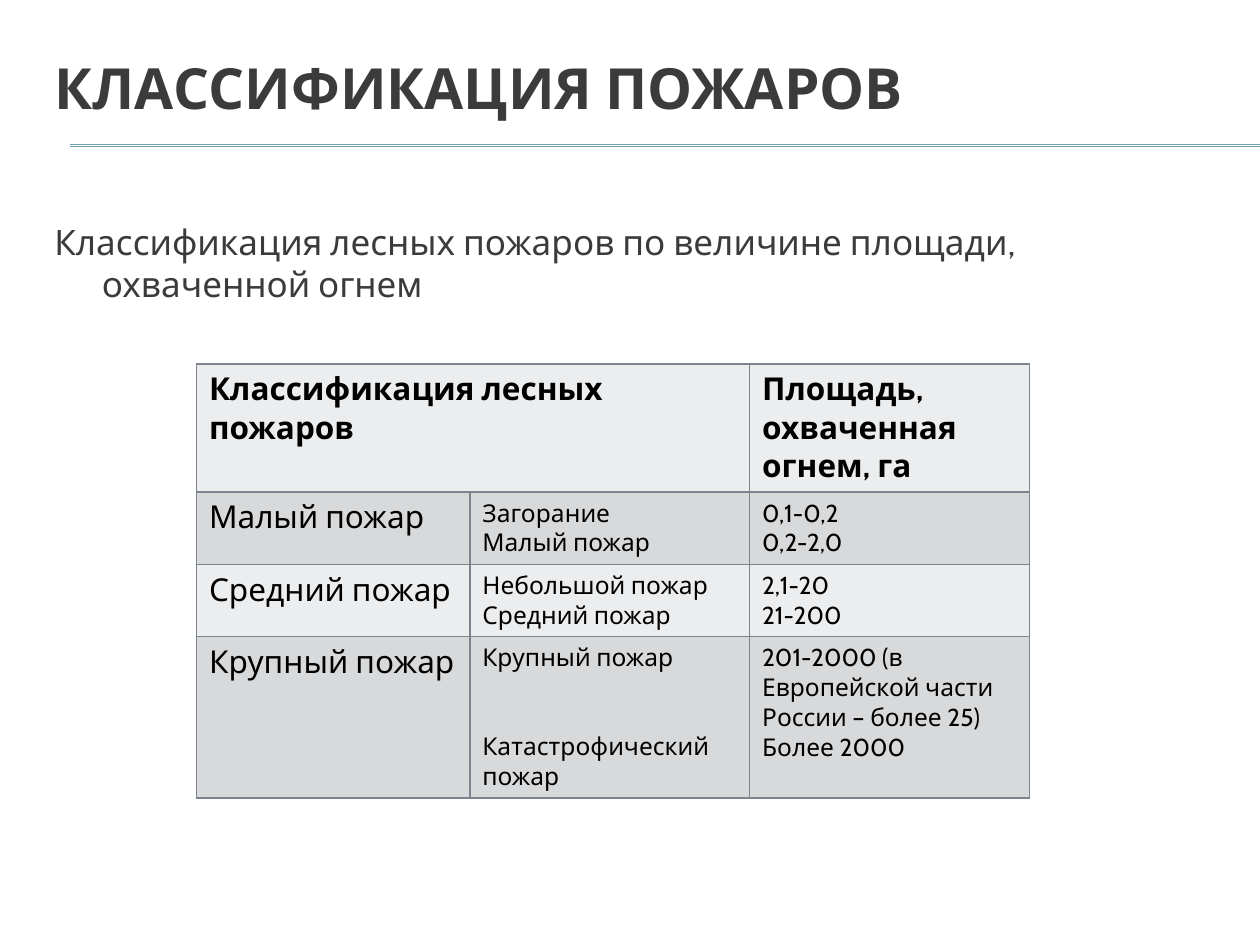
import pptx
import pptx.dml.color
import pptx.enum.text
import pptx.oxml
import pptx.oxml.ns
import pptx.util
from lxml import etree

Cm, Pt = pptx.util.Cm, pptx.util.Pt
Anchor = pptx.enum.text.MSO_ANCHOR
qn = pptx.oxml.ns.qn


def color(code):
    return pptx.dml.color.RGBColor.from_string(code)


class Deck:
    font = "Cabin"
    ink, black = "3B3B3B", "000000"
    rule, edge = "6EA0B0", "7E848D"
    bands = "ECEDEE", "D8D9DB"

    def __init__(self):
        self.file = pptx.Presentation()
        self.file.slide_width, self.file.slide_height = Cm(25.4), Cm(19.05)
        self.slide = self.file.slides.add_slide(self.file.slide_layouts[1])

    def style(self, par, size, code, bold=False):
        par.alignment = pptx.enum.text.PP_ALIGN.LEFT
        par.font.name, par.font.size, par.font.bold = self.font, Pt(size), bold
        par.font.color.rgb = color(code)

    def fill_holder(self, holder, text, box, size, anchor, bold=False):
        holder.left, holder.top, holder.width, holder.height = map(Cm, box)
        frame = holder.text_frame
        frame.text = text
        frame.auto_size = pptx.enum.text.MSO_AUTO_SIZE.NONE
        frame.vertical_anchor = anchor
        par = frame.paragraphs[0]
        par.space_before = Pt(0)
        self.style(par, size, self.ink, bold)
        return frame

    def title(self, text, box):
        frame = self.fill_holder(self.slide.shapes.title, text, box,
                                 32.4, Anchor.MIDDLE, True)
        # Lift the heading clear of the rule
        frame.margin_top, frame.margin_bottom = Cm(0), Cm(1.36)

    def body(self, text, box):
        frame = self.fill_holder(self.slide.placeholders[1], text, box,
                                 20, Anchor.TOP)
        props = frame.paragraphs[0]._p.get_or_add_pPr()
        props.set("marL", str(Cm(0.96)))
        props.set("indent", str(Cm(-0.96)))
        etree.SubElement(props, qn("a:buNone"))

    def line(self, left, right, top):
        line = self.slide.shapes.add_connector(
            1, Cm(left), Cm(top), Cm(right), Cm(top))
        line.line.color.rgb, line.line.width = color(self.rule), Pt(0.75)
        etree.SubElement(line._element.spPr, qn("a:effectLst"))

    def border(self, cell):
        props = cell._tc.get_or_add_tcPr()
        for spot, side in enumerate("LRTB"):
            line = etree.Element(qn(f"a:ln{side}"), w=str(Pt(1)))
            paint = etree.SubElement(line, qn("a:solidFill"))
            etree.SubElement(paint, qn("a:srgbClr"), val=self.edge)
            props.insert(spot, line)

    def cell(self, cell, text, size, bold, band):
        cell.fill.solid()
        cell.fill.fore_color.rgb = color(band)
        self.border(cell)
        cell.text_frame.text = text
        for par in cell.text_frame.paragraphs:
            self.style(par, size, self.black, bold)

    def table(self, rows, left, top, widths, heights):
        table = self.slide.shapes.add_table(
            len(rows), len(widths), Cm(left), Cm(top),
            Cm(sum(widths)), Cm(sum(heights))).table
        table.first_row = table.horz_banding = False
        for col, width in zip(table.columns, widths):
            col.width = Cm(width)
        for r, (row, height) in enumerate(zip(rows, heights)):
            table.rows[r].height = Cm(height)
            for c, text in enumerate(row):
                size = 18 if r == 0 or c == 0 else 14
                self.cell(table.cell(r, c), text, size, r == 0,
                          self.bands[r % 2])
        table.cell(0, 0).merge(table.cell(0, 1))
        return table


def main():
    deck = Deck()

    # Heading and double rule
    for top in (2.92, 2.95):
        deck.line(1.42, 25.4, top)
    deck.title("КЛАССИФИКАЦИЯ ПОЖАРОВ", (0.84, 1.27, 24.13, 2.34))

    # Lead text
    deck.body("Классификация лесных пожаров по величине площади, "
              "охваченной огнем", (0.84, 4.32, 24.13, 12.57))

    # Fire classes by area
    rows = [
        ("Классификация лесных пожаров", "", "Площадь, охваченная огнем, га"),
        ("Малый пожар", "Загорание\nМалый пожар", "0,1-0,2\n0,2-2,0"),
        ("Средний пожар", "Небольшой пожар\nСредний пожар", "2,1-20\n21-200"),
        ("Крупный пожар", "Крупный пожар\nКатастрофический пожар",
         "201-2000 (в Европейской части России – более 25)\nБолее 2000"),
    ]
    table = deck.table(rows, 3.96, 7.34, (5.51, 5.64, 5.64),
                       (2.55, 1.45, 1.45, 3.25))
    # Bring the last class level with its area
    table.cell(3, 1).text_frame.paragraphs[1].space_before = Pt(34)

    deck.file.save("out.pptx")


if __name__ == "__main__":
    main()
